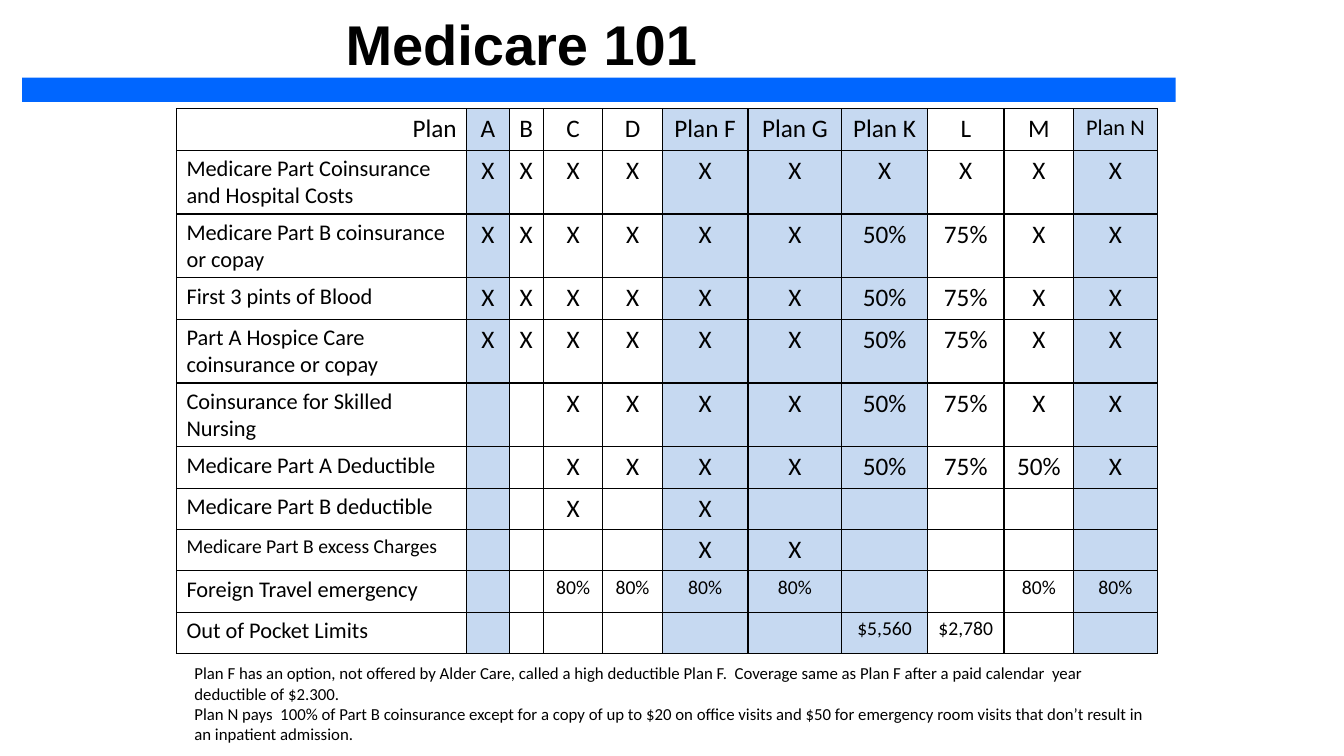
from dataclasses import dataclass

import pptx
import pptx.dml.color
import pptx.enum.shapes
import pptx.enum.text
import pptx.oxml
import pptx.oxml.ns
import pptx.slide
import pptx.table
import pptx.text.text
import pptx.util

Inches = pptx.util.Inches
RGBColor = pptx.dml.color.RGBColor
Align = pptx.enum.text.PP_ALIGN

BLACK = RGBColor(0x00, 0x00, 0x00)
WHITE = RGBColor(0xFF, 0xFF, 0xFF)
BAR_BLUE = RGBColor(0x00, 0x66, 0xFF)
PALE_BLUE = RGBColor(0xC6, 0xD9, 0xF1)

ONE_LINE = 0.41
TWO_LINES = 0.63
EMPTY = "-"


@dataclass(frozen=True)
class Plan:
    name: str
    width: float
    shaded: bool = False
    size: int = 18


@dataclass(frozen=True)
class Benefit:
    """One table row; coverage lists a value per plan, separated by spaces."""

    label: str
    coverage: str
    height: float = ONE_LINE
    label_size: int = 16
    coverage_size: int = 18


PLANS = [
    Plan("A", 0.42, shaded=True),
    Plan("B", 0.34),
    Plan("C", 0.59),
    Plan("D", 0.59),
    Plan("Plan F", 0.85, shaded=True),
    Plan("Plan G", 0.93, shaded=True),
    Plan("Plan K", 0.85, shaded=True),
    Plan("L", 0.76),
    Plan("M", 0.69),
    Plan("Plan N", 0.83, shaded=True, size=16),
]
LABEL_WIDTH = 2.88

BENEFITS = [
    Benefit("Medicare Part Coinsurance and Hospital Costs", "X X X X X X X X X X", TWO_LINES),
    Benefit("Medicare Part B coinsurance or copay", "X X X X X X 50% 75% X X", TWO_LINES),
    Benefit("First 3 pints of Blood", "X X X X X X 50% 75% X X"),
    Benefit("Part A Hospice Care coinsurance or copay", "X X X X X X 50% 75% X X", TWO_LINES),
    Benefit("Coinsurance for Skilled Nursing", "- - X X X X 50% 75% X X", TWO_LINES),
    Benefit("Medicare Part A Deductible", "- - X X X X 50% 75% 50% X"),
    Benefit("Medicare Part B deductible", "- - X - X - - - - -"),
    Benefit("Medicare Part B excess Charges", "- - - - X X - - - -", label_size=14),
    Benefit("Foreign Travel emergency", "- - 80% 80% 80% 80% - - 80% 80%", coverage_size=14),
    Benefit("Out of Pocket Limits", "- - - - - - $5,560 $2,780 - -", coverage_size=14),
]

NOTES = [
    "Plan F has an option, not offered by Alder Care, called a high deductible Plan F.  "
    "Coverage same as Plan F after a paid calendar  year deductible of $2.300.",
    "Plan N pays  100% of Part B coinsurance except for a copy of up to $20 on office visits "
    "and $50 for emergency room visits that don’t result in an inpatient admission.",
]


def write_text(
    frame: pptx.text.text.TextFrame,
    *lines: str,
    size: int,
    font: str = "Calibri",
    bold: bool = False,
    align: Align = Align.LEFT,
) -> None:
    frame.word_wrap = True
    for index, line in enumerate(lines):
        paragraph = frame.paragraphs[0] if index == 0 else frame.add_paragraph()
        paragraph.alignment = align
        run = paragraph.add_run()
        run.text = line
        run.font.name = font
        run.font.size = pptx.util.Pt(size)
        run.font.bold = bold
        run.font.color.rgb = BLACK


def add_text_box(
    slide: pptx.slide.Slide, left: float, top: float, width: float, height: float
) -> pptx.text.text.TextFrame:
    box = slide.shapes.add_textbox(Inches(left), Inches(top), Inches(width), Inches(height))
    return box.text_frame


def add_borders(cell: pptx.table._Cell) -> None:
    properties = cell._tc.get_or_add_tcPr()
    for side in ("lnL", "lnR", "lnT", "lnB"):
        properties.append(pptx.oxml.parse_xml(
            f'<a:{side} {pptx.oxml.ns.nsdecls("a")} w="12700"><a:solidFill>'
            f'<a:srgbClr val="{BLACK}"/></a:solidFill></a:{side}>'
        ))


def fill_cell(
    cell: pptx.table._Cell, text: str, size: int, align: Align, shaded: bool = False
) -> None:
    add_borders(cell)
    cell.fill.solid()
    cell.fill.fore_color.rgb = PALE_BLUE if shaded else WHITE
    if text != EMPTY:
        write_text(cell.text_frame, text, size=size, align=align)


def add_plan_table(slide: pptx.slide.Slide) -> None:
    widths = [LABEL_WIDTH] + [plan.width for plan in PLANS]
    heights = [ONE_LINE] + [benefit.height for benefit in BENEFITS]
    table = slide.shapes.add_table(
        len(heights), len(widths),
        Inches(1.75), Inches(1.08), Inches(sum(widths)), Inches(sum(heights)),
    ).table
    table.first_row = False
    table.horz_banding = False
    for column, width in zip(table.columns, widths):
        column.width = Inches(width)
    for row, height in zip(table.rows, heights):
        row.height = Inches(height)

    fill_cell(table.cell(0, 0), "Plan", 18, Align.RIGHT)
    for column, plan in enumerate(PLANS, 1):
        fill_cell(table.cell(0, column), plan.name, plan.size, Align.CENTER, plan.shaded)
    for row, benefit in enumerate(BENEFITS, 1):
        fill_cell(table.cell(row, 0), benefit.label, benefit.label_size, Align.LEFT)
        for column, (plan, value) in enumerate(zip(PLANS, benefit.coverage.split()), 1):
            fill_cell(
                table.cell(row, column), value, benefit.coverage_size, Align.CENTER, plan.shaded
            )


def add_title_bar(slide: pptx.slide.Slide) -> None:
    bar = slide.shapes.add_shape(
        pptx.enum.shapes.MSO_SHAPE.RECTANGLE,
        Inches(0.22), Inches(0.77), Inches(11.44), Inches(0.24),
    )
    bar.shadow.inherit = False
    bar.fill.solid()
    bar.fill.fore_color.rgb = BAR_BLUE
    bar.line.fill.background()


def main() -> None:
    presentation = pptx.Presentation()
    presentation.slide_width = Inches(13.33)
    presentation.slide_height = Inches(7.5)
    slide = presentation.slides.add_slide(presentation.slide_layouts[6])

    title = add_text_box(slide, 0.89, 0.05, 8.56, 0.77)
    write_text(title, "Medicare 101", size=40, font="Arial", bold=True, align=Align.CENTER)
    add_title_bar(slide)
    add_plan_table(slide)
    write_text(add_text_box(slide, 1.83, 6.53, 9.67, 0.91), *NOTES, size=12)

    presentation.save("out.pptx")


if __name__ == "__main__":
    main()
